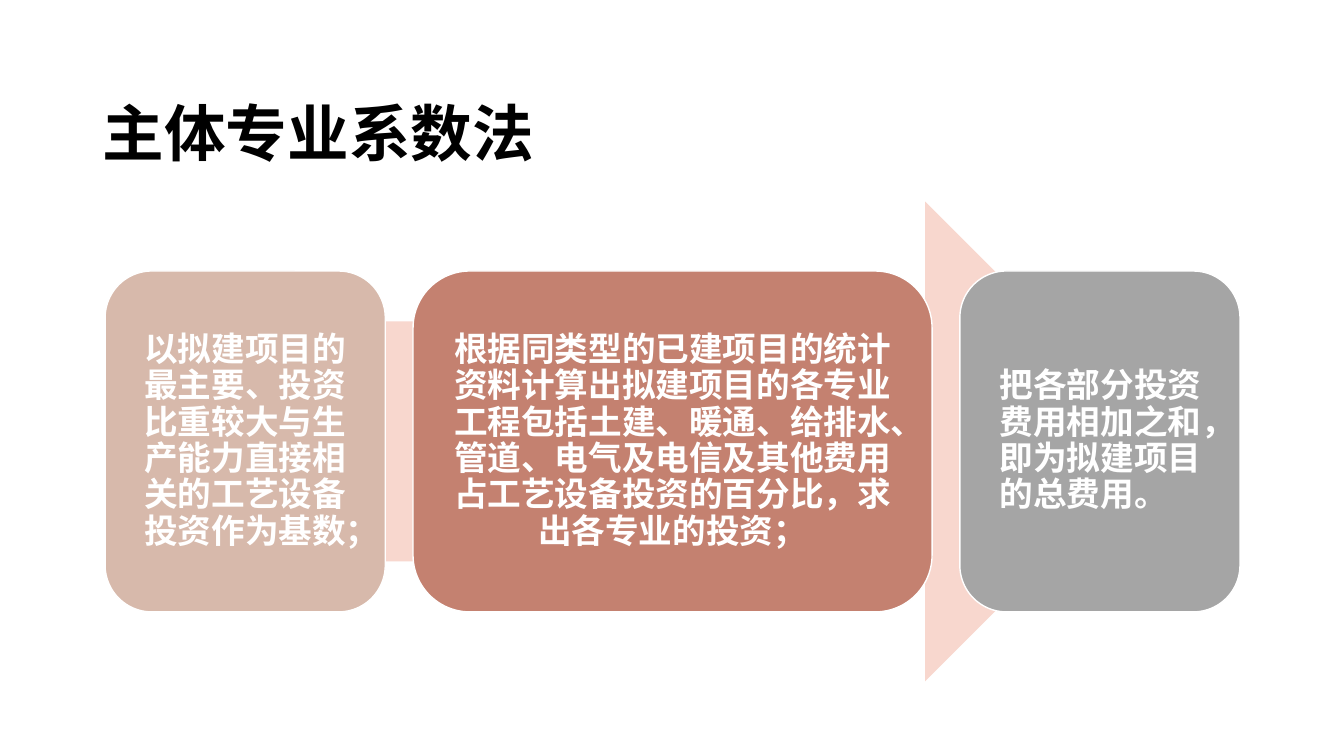
from pptx import Presentation
from pptx.dml.color import RGBColor
from pptx.enum.shapes import MSO_SHAPE
from pptx.enum.text import MSO_ANCHOR, PP_ALIGN
from pptx.util import Cm, Pt
from lxml import etree

ARROW, ROUND = MSO_SHAPE.RIGHT_ARROW, MSO_SHAPE.ROUNDED_RECTANGLE
MIDDLE = MSO_ANCHOR.MIDDLE
CENTER, LEFT, JUSTIFY = PP_ALIGN.CENTER, PP_ALIGN.LEFT, PP_ALIGN.JUSTIFY
CJK = "Noto Sans CJK SC"
A = "{http://schemas.openxmlformats.org/drawingml/2006/main}"


def color(value):
    return RGBColor.from_string(value)


def write(s, text, size, font, text_color, align, spacing):
    tf = s.text_frame
    tf.word_wrap = True
    tf.vertical_anchor = MIDDLE
    tf.text = text
    p = tf.paragraphs[0]
    p.alignment = align
    p.line_spacing = spacing
    r = p.runs[0]
    r.font.size = Pt(size)
    r.font.bold = True
    r.font.name = font
    r.font.color.rgb = color(text_color)
    etree.SubElement(r.font._element, A + "ea", typeface=CJK)
    return tf


prs = Presentation()
prs.slide_width, prs.slide_height = Cm(33.87), Cm(19.05)
slide = prs.slides.add_slide(prs.slide_layouts[6])

title = slide.shapes.add_textbox(Cm(2.34), Cm(1.02), Cm(29.21), Cm(3.68))
write(title, "主体专业系数法", 44, "Times New Roman", "000000", JUSTIFY, 1.5)

arrow = slide.shapes.add_shape(ARROW, Cm(4.52), Cm(5.08), Cm(24.84), Cm(12.09))
arrow.shadow.inherit = False
arrow.fill.solid()
arrow.fill.fore_color.rgb = color("F8D7CE")
arrow.line.fill.background()

steps = [
    (7.06, "D7B9AB", CENTER, 0.25,
     "以拟建项目的最主要、投资比重较大与生产能力直接相关的工艺设备投资作为基数；"),
    (13.08, "C48170", CENTER, 0.25,
     "根据同类型的已建项目的统计资料计算出拟建项目的各专业工程包括土建、暖通、给排水、"
     "管道、电气及电信及其他费用占工艺设备投资的百分比，求出各专业的投资；"),
    (7.06, "A5A5A5", LEFT, 0.66,
     "把各部分投资费用相加之和，即为拟建项目的总费用。"),
]
left, gap = 2.65, 0.7
for width, fill, align, inset, text in steps:
    s = slide.shapes.add_shape(ROUND, Cm(left), Cm(6.83), Cm(width), Cm(8.59))
    s.shadow.inherit = False
    s.fill.solid()
    s.fill.fore_color.rgb = color(fill)
    s.line.color.rgb = color("FFFFFF")
    s.line.width = Pt(1)
    tf = write(s, text, 24, CJK, "FFFFFF", align, 0.9)
    tf.margin_left = Cm(inset)
    tf.margin_right = tf.margin_top = tf.margin_bottom = Cm(0.25)
    left += width + gap

prs.save("out.pptx")
